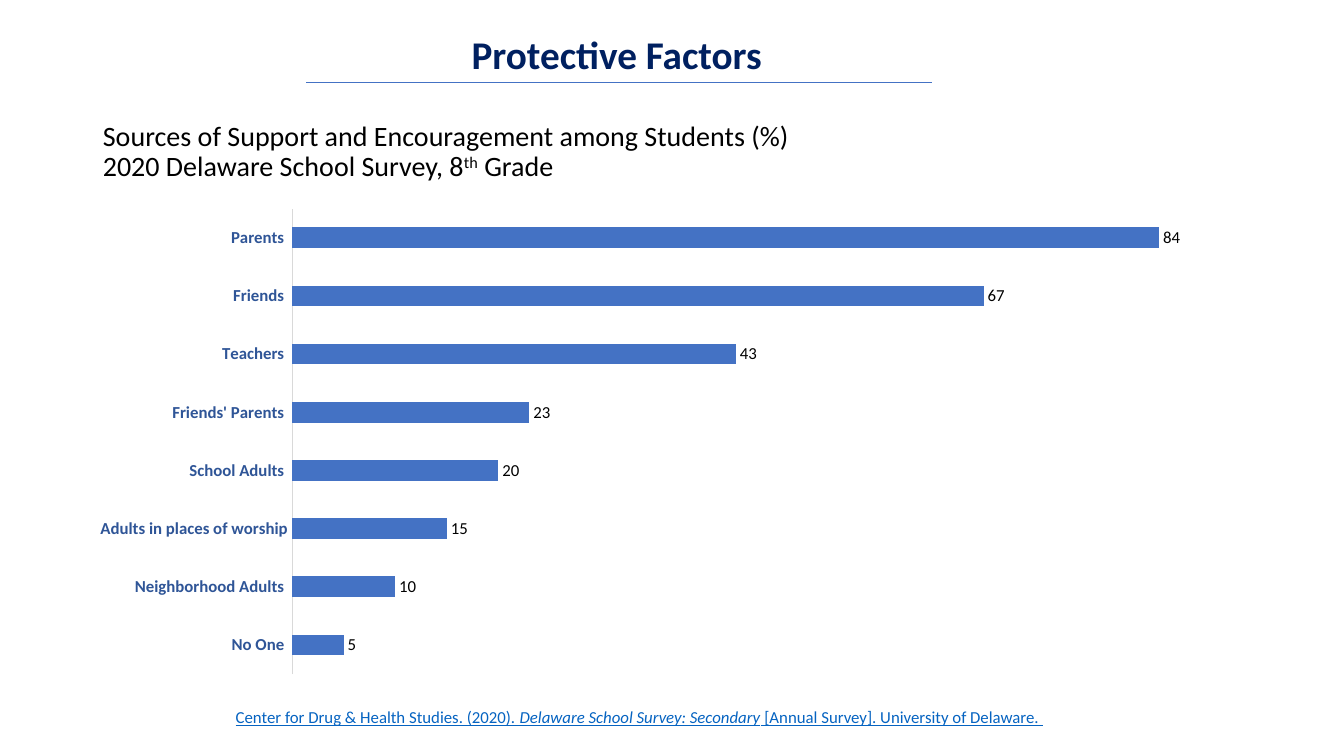
from lxml import etree
from pptx import Presentation
from pptx.chart.data import CategoryChartData
from pptx.dml.color import RGBColor
from pptx.enum.chart import XL_CHART_TYPE as ChartType, XL_LABEL_POSITION as LabelPosition
from pptx.enum.chart import XL_TICK_MARK as TickMark
from pptx.enum.shapes import MSO_CONNECTOR as Connector
from pptx.enum.text import MSO_ANCHOR as Anchor, MSO_AUTO_SIZE as AutoSize, PP_ALIGN as Align
from pptx.oxml import parse_xml
from pptx.oxml.ns import nsdecls, qn
from pptx.util import Inches, Pt

HEADING = "Protective Factors"
TITLE_LINES = [
    [("Sources of Support and Encouragement among Students (%)", False)],
    [("2020 Delaware School Survey, 8", False), ("th", True), (" Grade", False)],
]
CITATION = [
    ("Center for Drug & Health Studies. (2020). ", False),
    ("Delaware School Survey: Secondary", True),
    (" [Annual Survey]. University of Delaware. ", False),
]
SUPPORT = [
    ("Parents ", 84),
    ("Friends ", 67),
    ("Teachers ", 43),
    ("Friends' Parents ", 23),
    ("School Adults ", 20),
    ("Adults in places of worship", 15),
    ("Neighborhood Adults ", 10),
    ("No One ", 5),
]

FONT = "Calibri"
BLACK = RGBColor(0x00, 0x00, 0x00)
NAVY = RGBColor(0x00, 0x20, 0x60)
BLUE = RGBColor(0x44, 0x72, 0xC4)
DARK_BLUE = RGBColor(0x2F, 0x55, 0x97)
LINK_BLUE = RGBColor(0x05, 0x63, 0xC1)
GREY = RGBColor(0xD9, 0xD9, 0xD9)

WIDTH, HEIGHT = 13.33, 7.5
MARGIN = 0.92
CONTENT_WIDTH = WIDTH - 2 * MARGIN
PLOT_AREA = {"x": 0.17, "y": 0.015, "w": 0.8, "h": 0.97}
PLOT_AREA.update(x=0.172, w=0.802)


def set_font(font, size, color, bold=False):
    font.name, font.size, font.bold = FONT, Pt(size), bold
    font.color.rgb = color


def add_text_box(page, left, top, width, height):
    box = page.shapes.add_textbox(*map(Inches, (left, top, width, height)))
    box.text_frame.word_wrap = True
    return box.text_frame.paragraphs[0]


def add_title(page):
    title = page.shapes.title
    title.left, title.top = Inches(MARGIN), Inches(1.18)
    title.width, title.height = Inches(CONTENT_WIDTH), Inches(0.67)
    frame = title.text_frame
    frame.auto_size, frame.vertical_anchor = AutoSize.NONE, Anchor.MIDDLE
    para = frame.paragraphs[0]
    para.alignment, para.line_spacing = Align.LEFT, 0.9
    set_font(para.font, 20, BLACK)
    for number, line in enumerate(TITLE_LINES):
        if number:
            para.add_line_break()
        for text, raised in line:
            span = para.add_run()
            span.text = text
            if raised:
                span.font._element.set("baseline", "30000")


def add_heading(page):
    para = add_text_box(page, 4.58, 0.25, 3.23, 0.57)
    para.text = HEADING
    set_font(para.font, 28, NAVY, bold=True)
    rule = page.shapes.add_connector(
        Connector.STRAIGHT, *map(Inches, (3.04, 0.82, 9.24, 0.82)))
    rule.line.color.rgb, rule.line.width = BLUE, Pt(0.5)
    etree.SubElement(rule._element.spPr, qn("a:effectLst"))


def add_citation(page):
    para = add_text_box(page, 2.18, 6.95, 8.97, 0.31)
    para.line_spacing = 1.07
    para._p.get_or_add_pPr().set("marL", str(Inches(0.06)))
    set_font(para.font, 12, LINK_BLUE)
    for text, italic in CITATION:
        span = para.add_run()
        span.text = text
        span.font.italic, span.font.underline = italic, True


def place_plot_area(chart):
    """Fix the inner plot area as shares of the chart's size."""
    places = "".join(f'<c:{key} val="{share}"/>' for key, share in PLOT_AREA.items())
    layout = parse_xml(
        f'<c:layout {nsdecls("c")}><c:manualLayout><c:layoutTarget val="inner"/>'
        f'<c:xMode val="edge"/><c:yMode val="edge"/>{places}</c:manualLayout></c:layout>')
    plot_area = chart._chartSpace.chart.plotArea
    for old in plot_area.findall(qn("c:layout")):
        plot_area.remove(old)
    plot_area.insert(0, layout)


def add_support_chart(page):
    data = CategoryChartData(number_format="0")
    names, values = zip(*reversed(SUPPORT))
    data.categories = names
    data.add_series("Series 1", values)
    chart = page.shapes.add_chart(
        ChartType.BAR_CLUSTERED,
        *map(Inches, (MARGIN, 2, CONTENT_WIDTH, 4.76)), data).chart
    chart.has_legend = chart.has_title = False
    set_font(chart.font, 10, BLACK)
    place_plot_area(chart)

    sources = chart.category_axis
    sources.major_tick_mark = sources.minor_tick_mark = TickMark.NONE
    sources.format.line.color.rgb, sources.format.line.width = GREY, Pt(0.75)
    set_font(sources.tick_labels.font, 12, DARK_BLUE, bold=True)

    percent = chart.value_axis
    percent.minimum_scale, percent.maximum_scale = 0, 90
    percent.has_major_gridlines = percent.visible = False

    plot = chart.plots[0]
    plot.gap_width, plot.vary_by_categories = 182, False
    bars = plot.series[0]
    bars.format.fill.solid()
    bars.format.fill.fore_color.rgb = BLUE
    labels = bars.data_labels
    labels.show_value, labels.position = True, LabelPosition.OUTSIDE_END
    labels.number_format, labels.number_format_is_linked = "#,##0", False
    set_font(labels.font, 12, BLACK)


def main():
    deck = Presentation()
    deck.slide_width, deck.slide_height = Inches(WIDTH), Inches(HEIGHT)
    page = deck.slides.add_slide(deck.slide_layouts[5])
    add_title(page)
    add_heading(page)
    add_citation(page)
    add_support_chart(page)
    deck.save("out.pptx")


if __name__ == "__main__":
    main()
